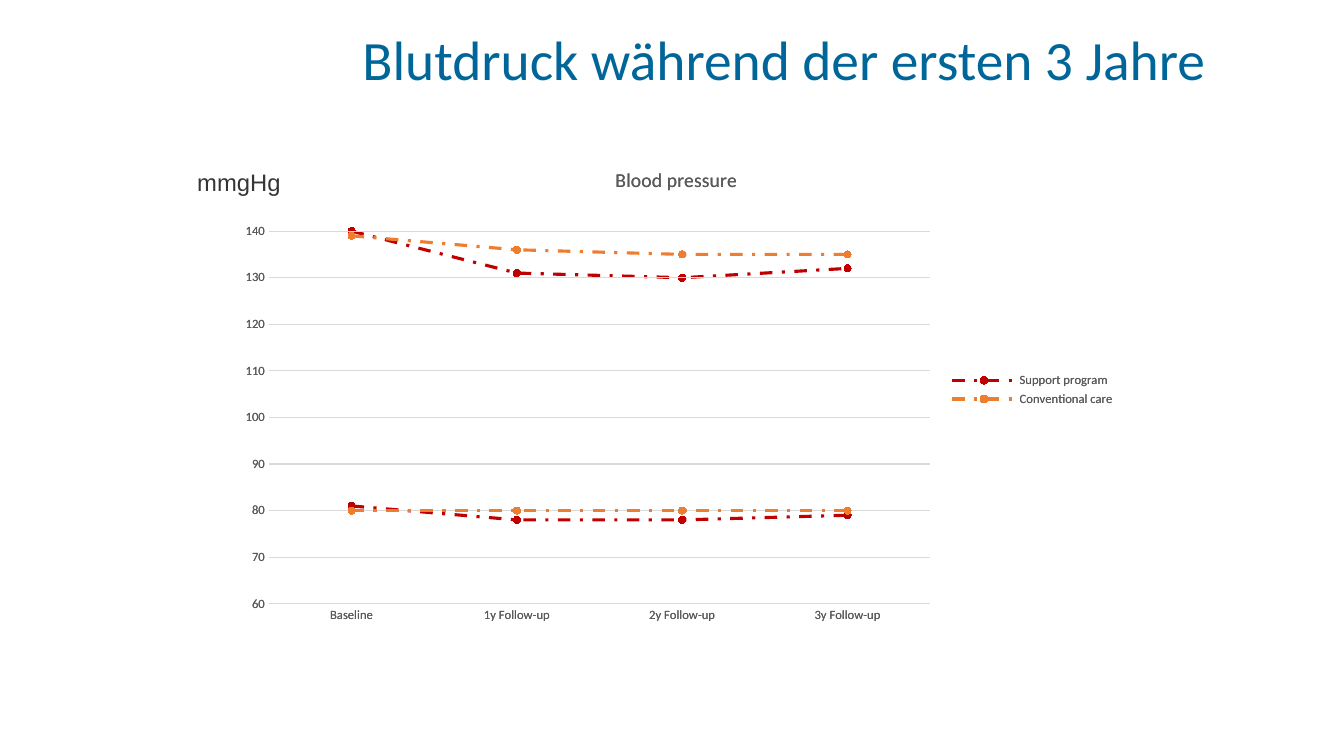
import dataclasses

import lxml.etree
import pptx
import pptx.chart.data
import pptx.dml.color
import pptx.enum.chart
import pptx.enum.dml
import pptx.enum.text
import pptx.oxml
import pptx.oxml.ns
import pptx.util

Cm = pptx.util.Cm
Pt = pptx.util.Pt


@dataclasses.dataclass(frozen=True)
class Theme:
    head: str = "006699"
    unit: str = "353535"
    label: str = "595959"
    grid: str = "D9D9D9"
    lines: tuple = ("C00000", "ED7D31")
    body: str = "Calibri"
    plain: str = "Arial"
    head_size: float = 39.6
    unit_size: float = 17
    title_size: float = 14
    label_size: float = 9
    thin: float = 0.75
    thick: float = 2.25
    dot: int = 5


class Board:
    def __init__(self, slide, theme):
        self.slide = slide
        self.theme = theme

    def font(self, font, size, color, name):
        font.size = Pt(size)
        font.name = name
        font.bold = False
        font.color.rgb = pptx.dml.color.RGBColor.from_string(color)

    def stroke(self, line, color, width):
        line.color.rgb = pptx.dml.color.RGBColor.from_string(color)
        line.width = Pt(width)

    def text(self, words, box, size, color, name, align, space=None):
        frame = self.slide.shapes.add_textbox(*map(Cm, box)).text_frame
        frame.word_wrap = True
        frame.vertical_anchor = pptx.enum.text.MSO_ANCHOR.TOP
        frame.text = words
        para = frame.paragraphs[0]
        para.alignment = align
        para.line_spacing = space
        self.font(para.runs[0].font, size, color, name)

    def chart(self, box, title, cats, rows):
        look = self.theme
        data = pptx.chart.data.CategoryChartData()
        data.categories = cats
        for name, vals in rows.items():
            data.add_series(name, vals)
        kind = pptx.enum.chart.XL_CHART_TYPE.LINE_MARKERS
        chart = self.slide.shapes.add_chart(kind, *map(Cm, box), data).chart
        self.font(chart.font, 10, "000000", look.body)
        self.clear(chart)

        chart.has_title = True
        frame = chart.chart_title.text_frame
        frame.text = title
        run = frame.paragraphs[0].runs[0]
        self.font(run.font, look.title_size, look.label, look.body)
        chart.chart_title.include_in_layout = False

        chart.has_legend = True
        chart.legend.position = pptx.enum.chart.XL_LEGEND_POSITION.RIGHT
        chart.legend.include_in_layout = False
        self.font(chart.legend.font, look.label_size, look.label, look.body)

        self.axes(chart)
        chart.plots[0].vary_by_categories = False
        for row, color in zip(chart.plots[0].series, look.lines):
            self.series(row, color)

    def clear(self, chart):
        tag = pptx.oxml.ns.qn
        area = lxml.etree.Element(tag("c:spPr"))
        lxml.etree.SubElement(area, tag("a:noFill"))
        edge = lxml.etree.SubElement(area, tag("a:ln"))
        lxml.etree.SubElement(edge, tag("a:noFill"))
        chart.element.find(tag("c:chart")).addnext(area)

    def axes(self, chart):
        look = self.theme
        none = pptx.enum.chart.XL_TICK_MARK.NONE
        for axis in (chart.category_axis, chart.value_axis):
            axis.major_tick_mark = none
            axis.minor_tick_mark = none
            self.font(axis.tick_labels.font, look.label_size, look.label, look.body)
        self.stroke(chart.category_axis.format.line, look.grid, look.thin)
        scale = chart.value_axis
        scale.minimum_scale = 60
        scale.maximum_scale = 145
        scale.major_unit = 10
        scale.format.line.fill.background()
        scale.has_major_gridlines = True
        self.stroke(scale.major_gridlines.format.line, look.grid, look.thin)

    def series(self, row, color):
        look = self.theme
        row.smooth = False
        self.stroke(row.format.line, color, look.thick)
        row.format.line.dash_style = pptx.enum.dml.MSO_LINE.DASH_DOT
        mark = row.marker
        mark.style = pptx.enum.chart.XL_MARKER_STYLE.CIRCLE
        mark.size = look.dot
        mark.format.fill.solid()
        mark.format.fill.fore_color.rgb = pptx.dml.color.RGBColor.from_string(color)
        self.stroke(mark.format.line, color, look.thin)


def main():
    deck = pptx.Presentation()
    deck.slide_width = Cm(33.87)
    deck.slide_height = Cm(19.05)
    look = Theme()
    board = Board(deck.slides.add_slide(deck.slide_layouts[6]), look)
    align = pptx.enum.text.PP_ALIGN

    cats = ["Baseline", "1y Follow-up", "2y Follow-up", "3y Follow-up"]
    upper = {
        "Support program": (140, 131, 130, 132),
        "Conventional care": (139, 136, 135, 135),
    }
    lower = {
        "Support program": (81, 78, 78, 79),
        "Conventional care": (80, 80, 80, 80),
    }
    for rows in (upper, lower):
        board.chart((5.74, 3.71, 22.61, 12.22), "Blood pressure", cats, rows)

    board.text("Blutdruck während der ersten 3 Jahre", (8.33, 0.71, 22.86, 3.18),
               look.head_size, look.head, look.body, align.CENTER, 0.9)
    board.text("mmgHg", (4.72, 4.11, 3, 0.99),
               look.unit_size, look.unit, look.plain, align.LEFT)
    deck.save("out.pptx")


if __name__ == "__main__":
    main()
